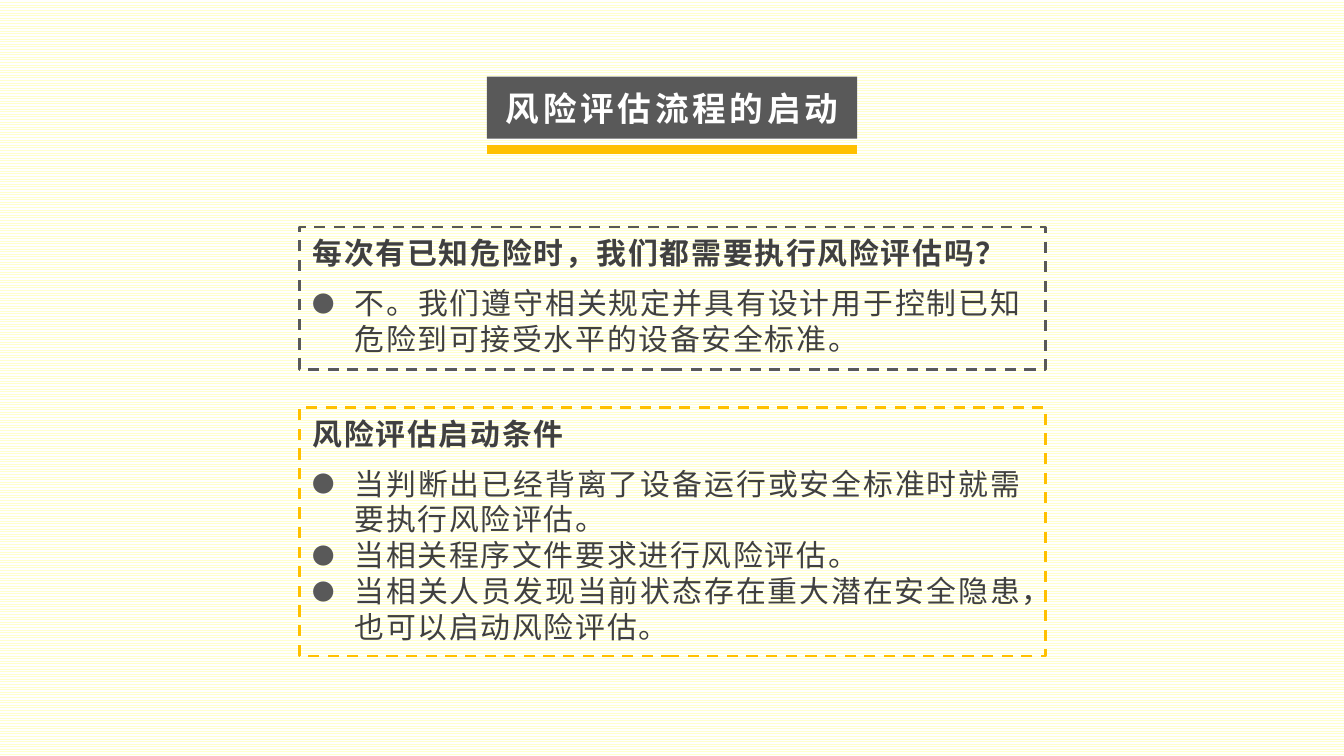
from dataclasses import dataclass

from lxml import etree
from pptx import Presentation
from pptx.dml.color import RGBColor
from pptx.enum.dml import MSO_LINE, MSO_PATTERN
from pptx.enum.shapes import MSO_CONNECTOR, MSO_SHAPE
from pptx.enum.text import MSO_ANCHOR, MSO_AUTO_SIZE, PP_ALIGN
from pptx.oxml.ns import qn
from pptx.util import Cm, Pt

DASH = MSO_LINE.DASH
STRIPES = MSO_PATTERN.LIGHT_HORIZONTAL
STRAIGHT = MSO_CONNECTOR.STRAIGHT
RECT = MSO_SHAPE.RECTANGLE
MIDDLE = MSO_ANCHOR.MIDDLE
NO_FIT = MSO_AUTO_SIZE.NONE
CENTER, JUSTIFY = PP_ALIGN.CENTER, PP_ALIGN.JUSTIFY


@dataclass(frozen=True)
class Theme:
    """Colours, font and type sizes of the slide."""
    font: str = "Noto Sans CJK SC"
    title_size: int = 18
    body_size: int = 16
    grey: RGBColor = RGBColor(0x59, 0x59, 0x59)
    amber: RGBColor = RGBColor(0xFF, 0xC0, 0x00)
    ink: RGBColor = RGBColor(0x40, 0x40, 0x40)
    white: RGBColor = RGBColor(0xFF, 0xFF, 0xFF)
    cream: RGBColor = RGBColor(0xFF, 0xFF, 0xCC)


THEME = Theme()
PANEL_LEFT, PANEL_WIDTH, TEXT_WIDTH = 5.66, 14.1, 13.92
HEADING_OFFSET, BODY_OFFSET = 0.03, 0.97
PANELS = [
    (4.29, 2.69, THEME.grey, "每次有已知危险时，我们都需要执行风险评估吗？", [
        "不。我们遵守相关规定并具有设计用于控制已知危险到可接受水平的设备安全标准。",
    ]),
    (7.7, 4.7, THEME.amber, "风险评估启动条件", [
        "当判断出已经背离了设备运行或安全标准时就需要执行风险评估。",
        "当相关程序文件要求进行风险评估。",
        "当相关人员发现当前状态存在重大潜在安全隐患，也可以启动风险评估。",
    ]),
]


def format_paragraph(p, size, color, bold, spacing, align):
    """Align a paragraph and style its runs, East Asian font included."""
    p.alignment = align
    for r in p.runs:
        r.font.name = THEME.font
        r.font.size = Pt(size)
        r.font.bold = bold
        r.font.color.rgb = color
        rPr = r.font._element
        rPr.set("spc", str(spacing * 100))
        etree.SubElement(rPr, qn("a:ea"), typeface=THEME.font)


def add_bullet(p):
    """Give a paragraph a small grey dot and a hanging indent."""
    pPr = p._p.get_or_add_pPr()
    pPr.set("marL", str(Cm(0.79)))
    pPr.set("indent", str(-Cm(0.79)))
    color = etree.SubElement(pPr, qn("a:buClr"))
    etree.SubElement(color, qn("a:srgbClr"), val=str(THEME.grey))
    etree.SubElement(pPr, qn("a:buSzPct"), val="75000")
    etree.SubElement(pPr, qn("a:buFont"), typeface=THEME.font)
    etree.SubElement(pPr, qn("a:buChar"), char="●")


def add_title(s, text, left, top, width, height):
    """Place the title on a grey band with an amber rule below."""
    sp = s.shapes.title
    sp.left, sp.top, sp.width, sp.height = Cm(left), Cm(top), Cm(width), Cm(height)
    sp.fill.solid()
    sp.fill.fore_color.rgb = THEME.grey
    tf = sp.text_frame
    tf.text = text
    tf.auto_size = NO_FIT
    tf.word_wrap = True
    tf.vertical_anchor = MIDDLE
    tf.margin_left = tf.margin_right = Cm(0.3)
    tf.margin_top = tf.margin_bottom = Cm(0.2)
    format_paragraph(tf.paragraphs[0], THEME.title_size, THEME.white, True, 2, CENTER)
    y = Cm(top + height + 0.2)
    rule = s.shapes.add_connector(STRAIGHT, Cm(left), y, Cm(left + width), y)
    rule.line.color.rgb = THEME.amber
    rule.line.width = Pt(5)
    etree.SubElement(rule._element.spPr, qn("a:effectLst"))


def add_text(s, lines, top, height, bold=False, bullets=False):
    """Add a justified text box, one paragraph a line."""
    box = s.shapes.add_textbox(Cm(PANEL_LEFT), Cm(top), Cm(TEXT_WIDTH), Cm(height))
    tf = box.text_frame
    tf.word_wrap = True
    tf.text = "\n".join(lines)
    for p in tf.paragraphs:
        format_paragraph(p, THEME.body_size, THEME.ink, bold, 1, JUSTIFY)
        if bullets:
            add_bullet(p)


def add_frame(s, top, height, color):
    """Draw the dashed outline of a panel."""
    sp = s.shapes.add_shape(RECT, Cm(PANEL_LEFT), Cm(top), Cm(PANEL_WIDTH), Cm(height))
    sp.shadow.inherit = False
    sp.fill.background()
    sp.line.color.rgb = color
    sp.line.width = Pt(1.5)
    sp.line.dash_style = DASH


def add_panel(s, top, height, color, heading, points):
    """Add a heading and its bullet points within a dashed frame."""
    add_text(s, [heading], top + HEADING_OFFSET, BODY_OFFSET - HEADING_OFFSET, bold=True)
    add_text(s, points, top + BODY_OFFSET, height - BODY_OFFSET - 0.06, bullets=True)
    add_frame(s, top, height, color)


def set_background(s):
    """Fill the background with pale horizontal stripes."""
    fill = s.background.fill
    fill.patterned()
    fill.pattern = STRIPES
    fill.fore_color.rgb = THEME.cream
    fill.back_color.rgb = THEME.white


def main():
    """Build and save the slide."""
    prs = Presentation()
    prs.slide_width, prs.slide_height = Cm(25.4), Cm(14.29)
    s = prs.slides.add_slide(prs.slide_layouts.get_by_name("Title Only"))
    set_background(s)
    add_title(s, "风险评估流程的启动", 9.2, 1.45, 7, 1.17)
    for panel in PANELS:
        add_panel(s, *panel)
    prs.save("out.pptx")


if __name__ == "__main__":
    main()
